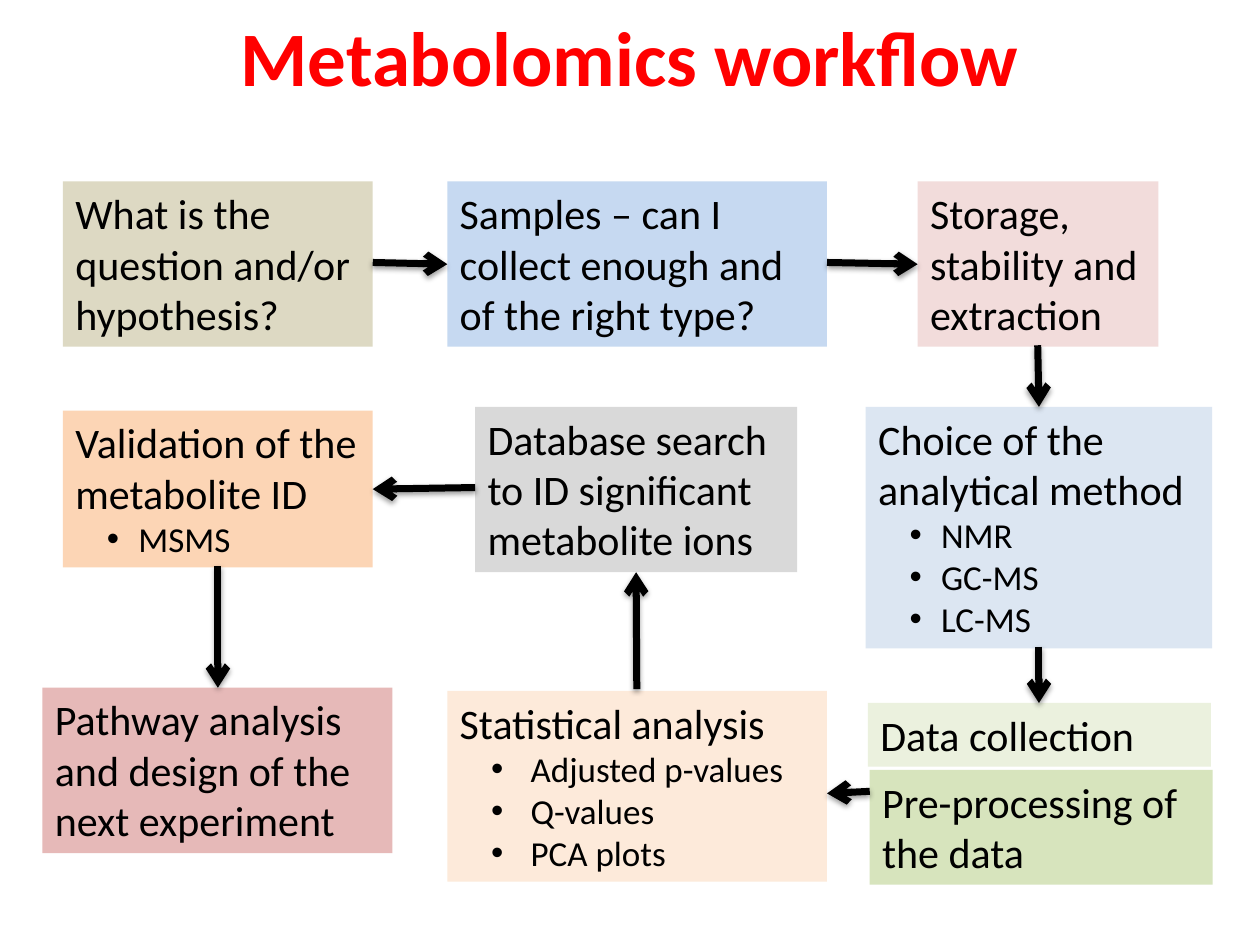
import lxml.etree
import pptx
import pptx.dml.color
import pptx.enum.shapes
import pptx.enum.text
import pptx.oxml.ns
import pptx.util

Pt = pptx.util.Pt
RGBColor = pptx.dml.color.RGBColor
qn = pptx.oxml.ns.qn

RED = RGBColor(0xFF, 0x00, 0x00)
BLACK = RGBColor(0x00, 0x00, 0x00)
TAN = RGBColor(0xDD, 0xD9, 0xC3)
BLUE = RGBColor(0xC6, 0xD9, 0xF1)
PINK = RGBColor(0xF2, 0xDC, 0xDB)
PALE_BLUE = RGBColor(0xDC, 0xE6, 0xF2)
PALE_GREEN = RGBColor(0xEB, 0xF1, 0xDE)
GREEN = RGBColor(0xD7, 0xE4, 0xBD)
PALE_ORANGE = RGBColor(0xFD, 0xEA, 0xDA)
GREY = RGBColor(0xD9, 0xD9, 0xD9)
ORANGE = RGBColor(0xFC, 0xD5, 0xB5)
ROSE = RGBColor(0xE6, 0xB9, 0xB8)


def write_text(paragraph, text, size=24, color=BLACK, bold=False,
               alignment=pptx.enum.text.PP_ALIGN.LEFT, hanging=None):
    paragraph.alignment = alignment
    run = paragraph.add_run()
    run.text = text
    run.font.name = "Calibri"
    run.font.size = Pt(size)
    run.font.bold = bold
    run.font.color.rgb = color
    if hanging:
        paragraph.level = 1
        properties = paragraph._p.get_or_add_pPr()
        properties.set("marL", str(Pt(18 + hanging)))
        properties.set("indent", str(-Pt(hanging)))
        lxml.etree.SubElement(properties, qn("a:buFont"), typeface="Arial")
        lxml.etree.SubElement(properties, qn("a:buChar"), char="•")


presentation = pptx.Presentation()
presentation.slide_width = Pt(720)
presentation.slide_height = Pt(540)
slide = presentation.slides.add_slide(presentation.slide_layouts[5])

title = slide.shapes.title
title.left, title.top, title.width, title.height = Pt(36), Pt(2), Pt(648), Pt(90)
title.text_frame.vertical_anchor = pptx.enum.text.MSO_ANCHOR.TOP
write_text(title.text_frame.paragraphs[0], "Metabolomics workflow", size=44,
           color=RED, bold=True, alignment=pptx.enum.text.PP_ALIGN.CENTER)

steps = [
    (36, 103.7, 177, 94.5, TAN, "What is the question and/or hypothesis?", [], 0),
    (255.6, 103.7, 217, 94.5, BLUE,
     "Samples – can I collect enough and of the right type?", [], 0),
    (524.4, 103.7, 137.5, 94.5, PINK, "Storage, stability and extraction", [], 0),
    (494.7, 232.5, 198, 138, PALE_BLUE, "Choice of the analytical method",
     ["NMR", "GC-MS", "LC-MS"], 18),
    (496, 401.7, 196, 36.4, PALE_GREEN, "Data collection", [], 0),
    (497, 440, 196, 65.5, GREEN, "Pre-processing of the data", [], 0),
    (255.6, 394.8, 217, 109, PALE_ORANGE, "Statistical analysis",
     ["Adjusted p-values", "Q-values", "PCA plots"], 22.5),
    (271.5, 232.5, 184, 94.5, GREY,
     "Database search to ID significant metabolite ions", [], 0),
    (36, 234.7, 177, 89.5, ORANGE, "Validation of the metabolite ID", ["MSMS"], 18),
    (24.3, 393, 200, 94.5, ROSE,
     "Pathway analysis and design of the next experiment", [], 0),
]
for left, top, width, height, color, heading, bullets, hanging in steps:
    box = slide.shapes.add_shape(pptx.enum.shapes.MSO_SHAPE.RECTANGLE,
                                 Pt(left), Pt(top), Pt(width), Pt(height))
    box.shadow.inherit = False
    box.fill.solid()
    box.fill.fore_color.rgb = color
    box.line.fill.background()
    text_frame = box.text_frame
    text_frame.word_wrap = True
    text_frame.vertical_anchor = pptx.enum.text.MSO_ANCHOR.TOP
    text_frame.auto_size = pptx.enum.text.MSO_AUTO_SIZE.SHAPE_TO_FIT_TEXT
    write_text(text_frame.paragraphs[0], heading)
    for bullet in bullets:
        write_text(text_frame.add_paragraph(), bullet, size=20, hanging=hanging)

arrows = [
    (213, 150, 255.6, 151),
    (472.6, 150, 524.4, 151),
    (593, 197.3, 593.7, 232.5),
    (593.7, 369.5, 593.7, 401.7),
    (497, 452.2, 472.6, 453.4),
    (363.9, 393.8, 363.5, 327),
    (271.5, 278.6, 213, 279.5),
    (124.5, 323.5, 124.5, 393),
]
for start_x, start_y, end_x, end_y in arrows:
    arrow = slide.shapes.add_connector(pptx.enum.shapes.MSO_CONNECTOR.STRAIGHT,
                                       Pt(start_x), Pt(start_y), Pt(end_x), Pt(end_y))
    arrow.line.width = Pt(4)
    arrow.line.color.rgb = BLACK
    properties = arrow._element.spPr
    lxml.etree.SubElement(properties.find(qn("a:ln")), qn("a:tailEnd"), type="arrow")
    effects = lxml.etree.SubElement(properties, qn("a:effectLst"))
    shadow = lxml.etree.SubElement(effects, qn("a:outerShdw"), blurRad=str(Pt(3.1)),
                                   dist=str(Pt(1.6)), dir="5400000", rotWithShape="0")
    shadow_color = lxml.etree.SubElement(shadow, qn("a:srgbClr"), val=str(BLACK))
    lxml.etree.SubElement(shadow_color, qn("a:alpha"), val="38000")

presentation.save("out.pptx")
